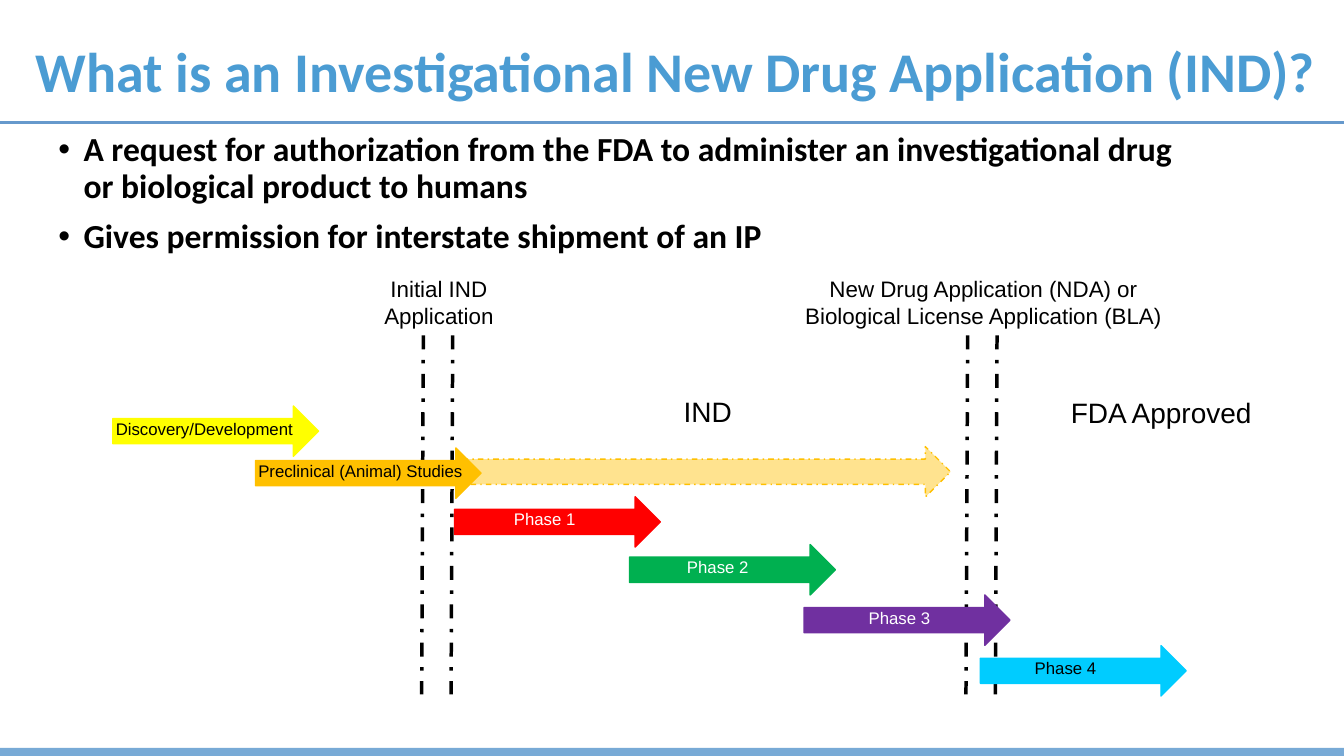
from lxml.etree import SubElement
from pptx import Presentation
from pptx.dml.color import RGBColor
from pptx.enum.dml import MSO_LINE
from pptx.enum.shapes import MSO_CONNECTOR, MSO_SHAPE
from pptx.enum.text import MSO_ANCHOR, PP_ALIGN
from pptx.oxml.ns import qn
from pptx.util import Pt

BLACK = RGBColor(0x00, 0x00, 0x00)
WHITE = RGBColor(0xFF, 0xFF, 0xFF)
TITLE_BLUE = RGBColor(0x4B, 0x9C, 0xD3)
RULE_BLUE = RGBColor(0x66, 0x99, 0xCC)
FOOTER_BLUE = RGBColor(0x78, 0xAA, 0xD6)
YELLOW = RGBColor(0xFF, 0xFF, 0x00)
AMBER = RGBColor(0xFF, 0xC0, 0x00)
RED = RGBColor(0xFF, 0x00, 0x00)
GREEN = RGBColor(0x00, 0xB0, 0x50)
PURPLE = RGBColor(0x70, 0x30, 0xA0)
CYAN = RGBColor(0x00, 0xCC, 0xFF)

SLIDE_WIDTH, SLIDE_HEIGHT = 960, 540
TITLE = "What is an Investigational New Drug Application (IND)?"
BULLETS = [
    "A request for authorization from the FDA to administer an investigational drug or biological product to humans",
    "Gives permission for interstate shipment of an IP",
]
STAGES = [
    ("Discovery/Development", 80.6, 290, 147, YELLOW, BLACK, 75.6),
    ("Preclinical (Animal) Studies", 182.6, 320, 161, AMBER, BLACK, 177.4),
    ("Phase 1", 324.7, 354.8, 147, RED, WHITE, 360),
    ("Phase 2", 449.7, 389, 147, GREEN, WHITE, 483.6),
    ("Phase 3", 574.4, 425, 147, PURPLE, WHITE, 613.4),
    ("Phase 4", 700.3, 461.2, 147, CYAN, BLACK, 732),
]
CAPTIONS = [
    ("Initial IND Application", 246, 193, 135, 46, 16),
    ("New Drug Application (NDA) or Biological License Application (BLA)", 561, 193, 283, 46, 16),
    ("FDA Approved", 748, 278.6, 163, 31.5, 20),
    ("IND", 438, 278, 135, 31.5, 20),
]
MILESTONES = [302.4, 691.2]
MILESTONE_GAP, MILESTONE_SLANT = 21, 1.2
MILESTONE_TOP, MILESTONE_BOTTOM = 239.6, 496
ARROW_HEIGHT, LABEL_DROP = 36, 5.4
LABEL_WIDTH, LABEL_HEIGHT = 179, 21.6


def add_text(page, lines, left, top, width, height, font, size, color, bold=False):
    box = page.shapes.add_textbox(Pt(left), Pt(top), Pt(width), Pt(height))
    frame = box.text_frame
    frame.word_wrap = True
    frame.text = "\n".join(lines)
    for para in frame.paragraphs:
        for span in para.runs:
            span.font.name = font
            span.font.size = Pt(size)
            span.font.bold = bold
            span.font.color.rgb = color
    return frame


def add_line(page, start, end, color, width):
    line = page.shapes.add_connector(MSO_CONNECTOR.STRAIGHT, *map(Pt, start + end))
    line.line.color.rgb = color
    line.line.width = Pt(width)
    SubElement(line._element.spPr, qn("a:effectLst"))
    return line


def add_block(page, kind, left, top, width, height, color):
    block = page.shapes.add_shape(kind, Pt(left), Pt(top), Pt(width), Pt(height))
    block.shadow.inherit = False
    block.fill.solid()
    block.fill.fore_color.rgb = color
    block.line.color.rgb = color
    block.line.width = Pt(1)
    return block


def add_header(page):
    footer = add_block(page, MSO_SHAPE.RECTANGLE, 0, 534.2, SLIDE_WIDTH, 5.8, FOOTER_BLUE)
    footer.line.fill.background()
    add_line(page, (0, 87.8), (SLIDE_WIDTH, 87.8), RULE_BLUE, 2)
    title = add_text(page, [TITLE], 13, 0.7, 939, 104.4, "Calibri", 40, TITLE_BLUE, True)
    title.vertical_anchor = MSO_ANCHOR.MIDDLE
    title.paragraphs[0].alignment = PP_ALIGN.CENTER
    title.paragraphs[0].line_spacing = 0.9


def add_bullets(page):
    body = add_text(page, BULLETS, 34.6, 91.4, 828, 118, "Calibri", 24, BLACK, True)
    for index, para in enumerate(body.paragraphs):
        para.line_spacing = 0.9
        para.space_before = Pt(10 if index else 0)
        properties = para._p.get_or_add_pPr()
        properties.set("marL", str(Pt(18)))
        properties.set("indent", str(-Pt(18)))
        SubElement(properties, qn("a:buFont"), typeface="Arial")
        SubElement(properties, qn("a:buChar"), char="•")


def add_timeline(page):
    for milestone in MILESTONES:
        for left in (milestone, milestone + MILESTONE_GAP):
            start = (left, MILESTONE_TOP)
            end = (left - MILESTONE_SLANT, MILESTONE_BOTTOM)
            add_line(page, start, end, BLACK, 2.5).line.dash_style = MSO_LINE.DASH_DOT

    ongoing = add_block(page, MSO_SHAPE.RIGHT_ARROW, 330.5, 319, 348.5, ARROW_HEIGHT, AMBER)
    ongoing.line.dash_style = MSO_LINE.DASH_DOT
    fill_color = ongoing._element.spPr.find(qn("a:solidFill"))[0]
    SubElement(fill_color, qn("a:alpha"), val="44000")

    for name, left, top, width, fill, ink, label_left in STAGES:
        add_block(page, MSO_SHAPE.RIGHT_ARROW, left, top, width, ARROW_HEIGHT, fill)
        add_text(page, [name], label_left, top + LABEL_DROP, LABEL_WIDTH, LABEL_HEIGHT, "Arial", 12, ink)

    for caption, left, top, width, height, size in CAPTIONS:
        frame = add_text(page, [caption], left, top, width, height, "Arial", size, BLACK)
        frame.paragraphs[0].alignment = PP_ALIGN.CENTER


def main():
    deck = Presentation()
    deck.slide_width, deck.slide_height = Pt(SLIDE_WIDTH), Pt(SLIDE_HEIGHT)
    page = deck.slides.add_slide(deck.slide_layouts[6])
    add_header(page)
    add_bullets(page)
    add_timeline(page)
    deck.save("out.pptx")


if __name__ == "__main__":
    main()
